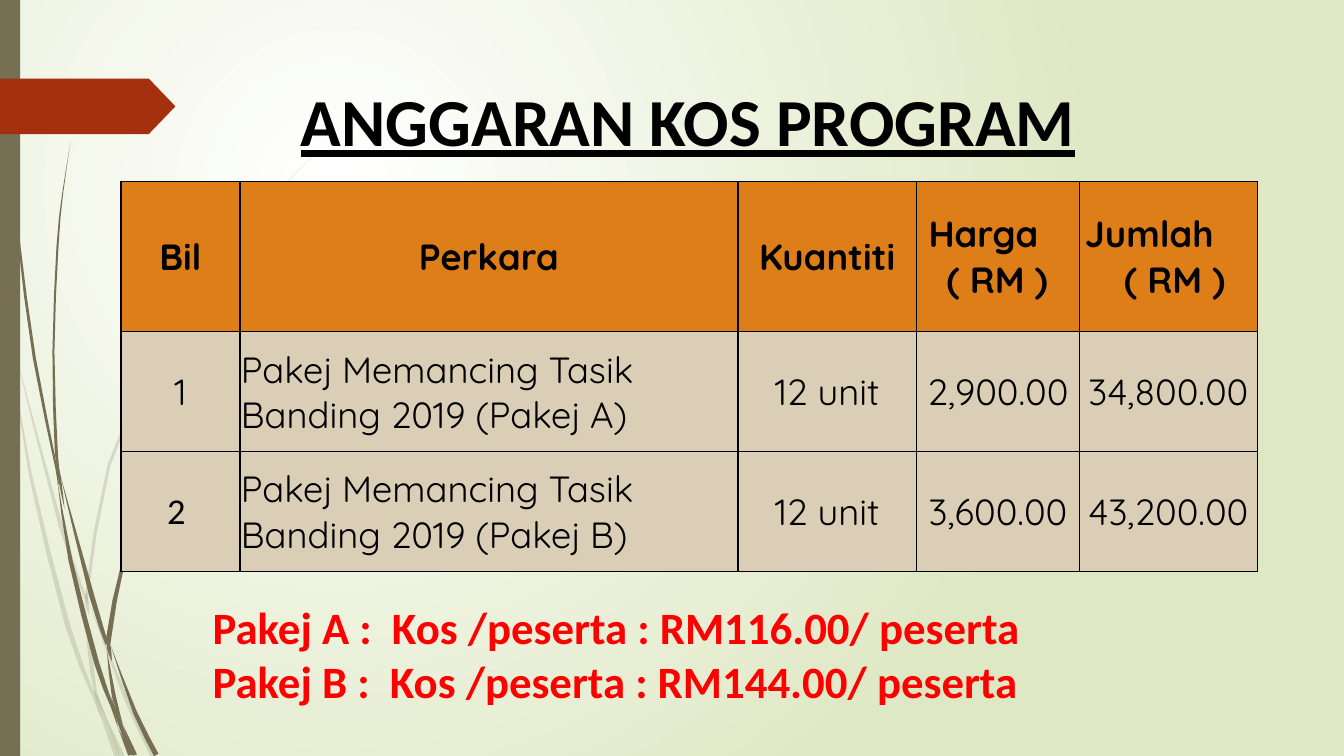
from dataclasses import dataclass
from math import hypot

from lxml.etree import SubElement
from pptx import Presentation
from pptx.dml.color import RGBColor
from pptx.enum.shapes import MSO_SHAPE as Shape
from pptx.enum.text import MSO_ANCHOR as Anchor, PP_ALIGN as Align
from pptx.oxml.ns import qn
from pptx.util import Emu, Pt

PX = 9144  # EMU per px, 100 px to the inch
OLIVE, RUST, BLACK, RED = "766F54", "A53010", "000000", "FF0000"
HEADER_FILL, BODY_FILL = "DE7E18", "DBCEB7"
STEPS = 2  # samples between two points of a grass blade

# A blade of grass is a list of (x, y, width) along its middle line
BladePoints = list[tuple[int, int, int]]


@dataclass
class Line:
    text: str
    indent: int | None = None  # centred when no indent is given
    font: str = "Quicksand"


@dataclass
class Caption:
    left: int
    top: int
    width: int
    height: int
    lines: list[str]
    size: int
    color: str
    align: Align
    underline: bool = False


FAINT_BLADES: list[BladePoints] = [
    [(0, 290, 8), (6, 322, 4), (11, 350, 0)],
    [(14, 345, 0), (60, 521, 4), (85, 594, 2)],
    [(88, 597, 0), (125, 693, 4), (152, 750, 5)],
    [(105, 711, 0), (121, 750, 5)],
    [(11, 350, 0), (30, 470, 3), (67, 620, 5), (92, 688, 3), (101, 714, 0)],
    [(84, 599, 0), (89, 646, 4), (95, 688, 3), (105, 711, 0)],
    [(312, 153, 0), (268, 198, 1), (229, 245, 1), (159, 349, 2), (108, 462, 3),
     (87, 584, 3), (88, 596, 0)],
    [(101, 714, 0), (116, 750, 5)],
    [(85, 586, 0), (86, 597, 4), (88, 610, 0)],
    [(93, 683, 0), (102, 709, 5), (119, 750, 0)],
]
SOLID_BLADES: list[BladePoints] = [
    [(4, 0, 1), (7, 110, 1), (18, 233, 2), (34, 355, 3), (56, 465, 2), (57, 481, 0)],
    [(60, 472, 0), (91, 591, 5), (106, 639, 3)],
    [(110, 641, 0), (134, 707, 4), (155, 749, 5)],
    [(57, 477, 0), (70, 556, 4), (96, 658, 5), (111, 700, 3), (117, 722, 0)],
    [(70, 141, 0), (62, 193, 1), (57, 245, 2), (53, 349, 2), (56, 451, 3), (60, 472, 0)],
    [(122, 719, 0), (134, 749, 4)],
    [(55, 449, 0), (59, 474, 3), (64, 505, 0)],
    [(260, 344, 0), (231, 374, 1), (204, 406, 1), (157, 475, 2), (124, 551, 3),
     (108, 632, 5), (110, 641, 0)],
    [(117, 722, 0), (129, 749, 4)],
    [(106, 645, 0), (113, 691, 4), (122, 719, 0)],
    [(106, 631, 0), (108, 643, 4), (111, 656, 0)],
    [(110, 691, 0), (119, 718, 4), (131, 749, 3)],
]

COLUMN_WIDTHS = [118, 494, 177, 162, 176]
ROW_HEIGHTS = [149, 119, 119]
COST_ROWS = [
    [[Line("Bil")], [Line("Perkara")], [Line("Kuantiti")],
     [Line("Harga", 11), Line("( RM )", 29)],
     [Line("Jumlah", 4), Line("( RM )", 43)]],
    [[Line("1")], [Line("Pakej Memancing Tasik Banding 2019 (Pakej A)", 0)],
     [Line("12 unit")], [Line("2,900.00")], [Line("34,800.00")]],
    [[Line("2 ", font="Calibri")], [Line("Pakej Memancing Tasik Banding 2019 (Pakej B)", 0)],
     [Line("12 unit")], [Line("3,600.00")], [Line("43,200.00")]],
]

CAPTIONS = [
    Caption(111, 74, 1143, 80, ["ANGGARAN KOS PROGRAM"], 48, BLACK, Align.CENTER, True),
    Caption(201, 590, 829, 145,
            ["Pakej A :  Kos /peserta : RM116.00/ peserta",
             "Pakej B :  Kos /peserta : RM144.00/ peserta"], 32, RED, Align.LEFT),
]


def px(length: float) -> Emu:
    return Emu(round(length * PX))


def paint(fill, color: str) -> None:
    fill.solid()
    fill.fore_color.rgb = RGBColor.from_string(color)


def finish(shape, color: str) -> None:
    paint(shape.fill, color)
    shape.line.fill.background()
    shape.shadow.inherit = False


def add_run(para, text: str, font: str, size: int, color: str, bold: bool):
    span = para.add_run()
    span.text = text
    span.font.name, span.font.size, span.font.bold = font, Pt(size), bold
    span.font.color.rgb = RGBColor.from_string(color)
    return span


def smooth(points: BladePoints) -> list[tuple[float, ...]]:
    """Catmull-Rom curve through all points, width included."""
    padded = [points[0], *points, points[-1]]
    curve = []
    for before, start, end, after in zip(padded, padded[1:], padded[2:], padded[3:]):
        for step in range(STEPS):
            t = step / STEPS
            curve.append(tuple(
                b + 0.5 * t * (c - a + t * (2 * a - 5 * b + 4 * c - d
                                            + t * (3 * (b - c) + d - a)))
                for a, b, c, d in zip(before, start, end, after)))
    return [*curve, points[-1]]


def draw_blade(page, points: BladePoints, alpha: int = 100) -> None:
    curve = smooth(points)
    left, right = [], []
    for i, (x, y, width) in enumerate(curve):
        x0, y0, _ = curve[max(i - 1, 0)]
        x1, y1, _ = curve[min(i + 1, len(curve) - 1)]
        reach = width / 2 / hypot(x1 - x0, y1 - y0)
        dx, dy = (y1 - y0) * reach, (x0 - x1) * reach
        left.append((px(x - dx), px(y - dy)))
        right.append((px(x + dx), px(y + dy)))
    outline = left + right[::-1]
    builder = page.shapes.build_freeform(*outline[0])
    builder.add_line_segments(outline[1:])
    shape = builder.convert_to_shape()
    finish(shape, OLIVE)
    if alpha < 100:
        color = shape.fill._xPr.find(".//" + qn("a:srgbClr"))
        SubElement(color, qn("a:alpha"), val=str(alpha * 1000))


def draw_background(page) -> None:
    fill = page.background.fill
    fill.gradient()
    for stop, color, position in zip(fill.gradient_stops, ("FFFFFF", "DFE8C4"), (0, 1)):
        stop.color.rgb = RGBColor.from_string(color)
        stop.position = position
    gradient = page.background._cSld.find(".//" + qn("a:gradFill"))
    gradient.remove(gradient.find(qn("a:lin")))
    circle = SubElement(gradient, qn("a:path"), path="circle")
    SubElement(circle, qn("a:fillToRect"), l="50000", t="50000", r="100000", b="100000")


def add_borders(cell) -> None:
    properties = cell._tc.get_or_add_tcPr()
    for index, side in enumerate(("lnL", "lnR", "lnT", "lnB")):
        border = properties.makeelement(qn("a:" + side), {"w": str(Pt(1))})
        properties.insert(index, border)
        solid = SubElement(border, qn("a:solidFill"))
        SubElement(solid, qn("a:srgbClr"), val=BLACK)


def draw_table(page) -> None:
    frame = page.shapes.add_table(len(ROW_HEIGHTS), len(COLUMN_WIDTHS), px(120), px(180),
                                  px(sum(COLUMN_WIDTHS)), px(sum(ROW_HEIGHTS)))
    table = frame.table
    for column, width in zip(table.columns, COLUMN_WIDTHS):
        column.width = px(width)
    for r, (height, row) in enumerate(zip(ROW_HEIGHTS, COST_ROWS)):
        table.rows[r].height = px(height)
        for c, lines in enumerate(row):
            cell = table.cell(r, c)
            paint(cell.fill, BODY_FILL if r else HEADER_FILL)
            add_borders(cell)
            cell.vertical_anchor = Anchor.MIDDLE
            cell.margin_left = cell.margin_right = cell.margin_top = px(1)
            cell.margin_bottom = 0
            for i, line in enumerate(lines):
                para = cell.text_frame.add_paragraph() if i else cell.text_frame.paragraphs[0]
                para.alignment = Align.CENTER if line.indent is None else Align.LEFT
                if line.indent:
                    para._p.get_or_add_pPr().set("marL", str(px(line.indent)))
                add_run(para, line.text, line.font, 26, BLACK, r == 0)


def draw_caption(page, caption: Caption) -> None:
    box = page.shapes.add_textbox(px(caption.left), px(caption.top),
                                  px(caption.width), px(caption.height))
    frame = box.text_frame
    frame.word_wrap = True
    for i, text in enumerate(caption.lines):
        para = frame.add_paragraph() if i else frame.paragraphs[0]
        para.alignment = caption.align
        span = add_run(para, text, "Calibri", caption.size, caption.color, True)
        span.font.underline = caption.underline


def main() -> None:
    deck = Presentation()
    deck.slide_width, deck.slide_height = px(1333), px(750)
    page = deck.slides.add_slide(deck.slide_layouts[6])

    # Backdrop: gradient, grass, side bar and arrow tab
    draw_background(page)
    for points in FAINT_BLADES:
        draw_blade(page, points, alpha=20)
    for points in SOLID_BLADES:
        draw_blade(page, points)
    finish(page.shapes.add_shape(Shape.RECTANGLE, 0, 0, px(20), px(750)), OLIVE)
    tab = page.shapes.add_shape(Shape.PENTAGON, 0, px(78), px(174), px(55))
    tab.adjustments[0] = 0.48
    finish(tab, RUST)

    # Cost table, title and price per participant
    draw_table(page)
    for caption in CAPTIONS:
        draw_caption(page, caption)
    deck.save("out.pptx")


if __name__ == "__main__":
    main()
